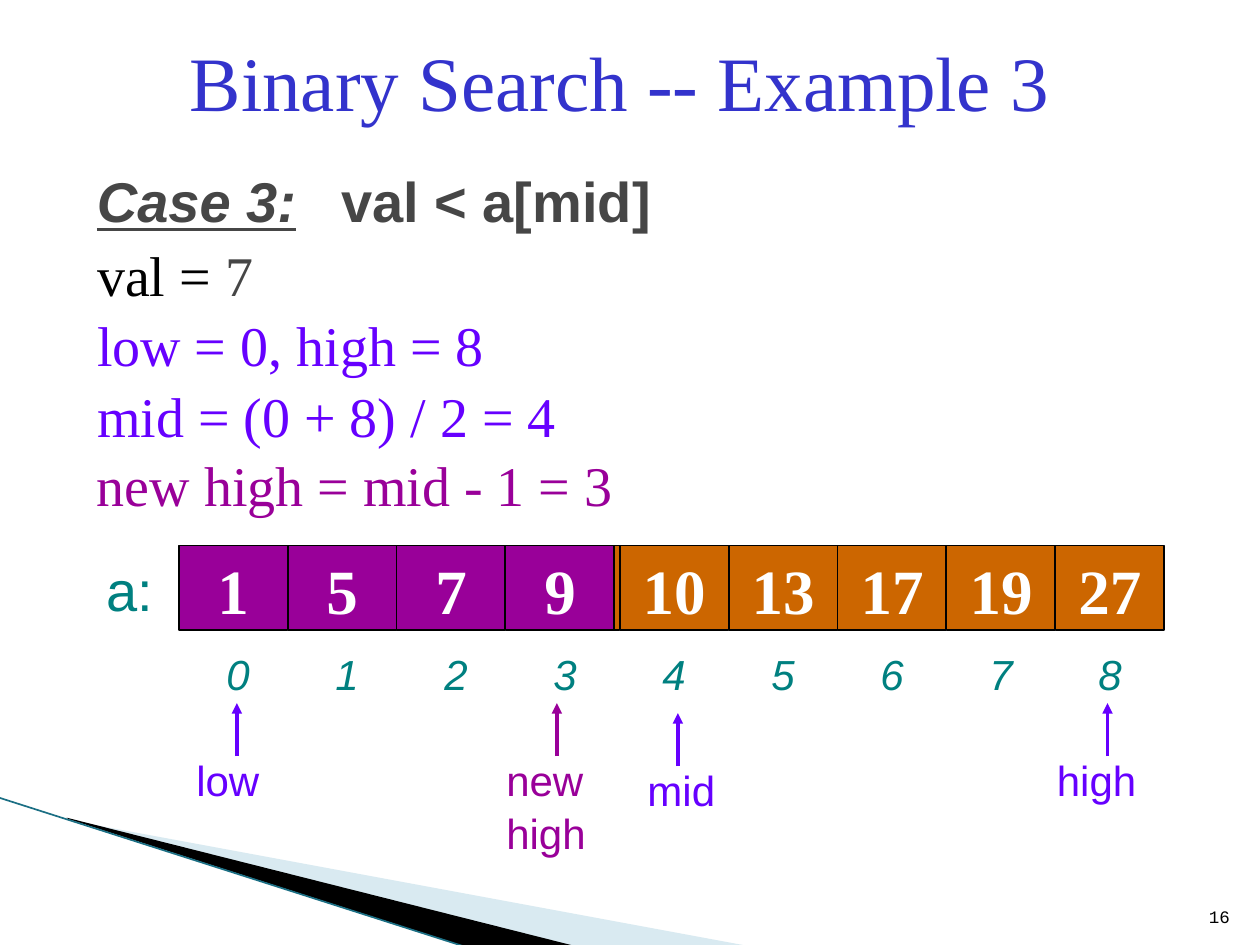
"""Build the slide for the third binary search example."""
from lxml.etree import SubElement
from pptx import Presentation
from pptx.dml.color import RGBColor
from pptx.enum.shapes import MSO_CONNECTOR as CONNECTOR, MSO_SHAPE as SHAPE
from pptx.enum.text import MSO_ANCHOR as ANCHOR, MSO_AUTO_SIZE as AUTO_SIZE, PP_ALIGN as ALIGN
from pptx.oxml.ns import qn
from pptx.util import Inches, Pt

SANS, SERIF, MONO = "Arial", "Times New Roman", "Courier New"
HEX = {
    "title": "3333CC", "text": "464646", "black": "000000", "white": "FFFFFF",
    "bounds": "6600FF", "new": "990099", "cell": "CC6600", "index": "008080",
    "swoosh": "A0CBDC", "edge": "1B6F84",
}
COLORS = {name: RGBColor.from_string(value) for name, value in HEX.items()}


def write(shape, lines, size, font, color, align=ALIGN.LEFT, anchor=ANCHOR.TOP, wrap=True):
    frame = shape.text_frame
    frame.text = lines
    frame.auto_size = AUTO_SIZE.NONE
    frame.word_wrap = wrap
    frame.vertical_anchor = anchor
    for paragraph in frame.paragraphs:
        paragraph.alignment = align
        paragraph.line_spacing = 1.05
        paragraph.space_before = Pt(0)
        paragraph.font.size = Pt(size)
        paragraph.font.name = font
        paragraph.font.color.rgb = COLORS[color]
    return frame.paragraphs


def add_line(start, end, color, width, arrow=False):
    line = slide.shapes.add_connector(CONNECTOR.STRAIGHT, *map(Inches, start + end))
    line.line.color.rgb = COLORS[color]
    line.line.width = Pt(width)
    if arrow:
        SubElement(line.line._get_or_add_ln(), qn("a:tailEnd"), type="triangle")
    SubElement(line._element.spPr, qn("a:effectLst"))


presentation = Presentation()
presentation.slide_width, presentation.slide_height = Inches(10), Inches(7.5)
slide = presentation.slides.add_slide(presentation.slide_layouts[1])
title, body = slide.placeholders

swooshes = [
    ("swoosh", [(0.55, 6.51), (5.95, 7.51), (4.56, 7.51), (0.55, 6.5)]),
    ("black", [(0.53, 6.49), (4.57, 7.51), (3.72, 7.52), (0.54, 6.5)]),
]
for color, points in swooshes:
    corners = [(Inches(x), Inches(y)) for x, y in points]
    builder = slide.shapes.build_freeform(*corners[0])
    builder.add_line_segments(corners[1:], close=True)
    swoosh = builder.convert_to_shape()
    swoosh.shadow.inherit = False
    swoosh.fill.solid()
    swoosh.fill.fore_color.rgb = COLORS[color]
    swoosh.line.fill.background()
    if color == "swoosh":
        fill_color = swoosh._element.spPr.find(qn("a:solidFill"))[0]
        SubElement(fill_color, qn("a:alpha"), val="40000")
add_line((-0.01, 6.33), (3.71, 7.52), "edge", 0.95)

title.left, title.top, title.width, title.height = map(Inches, (0.67, 0.25, 8.5, 0.75))
write(title, "Binary Search -- Example 3", 44, SERIF, "title", ALIGN.CENTER, ANCHOR.MIDDLE)

body.left, body.top, body.width, body.height = map(Inches, (0.67, 1.83, 4.5, 1.7))
body.text_frame.text = ""
steps = write(body, "val = \nlow = 0, high = 8\nmid = (0 + 8) / 2 = 4", 32, SERIF, "bounds")
for paragraph in steps:
    properties = paragraph._p.get_or_add_pPr()
    properties.set("marL", "0")
    properties.set("indent", "0")
    bullet = properties.makeelement(qn("a:buNone"))
    properties.find(qn("a:defRPr")).addprevious(bullet)
steps[0].font.color.rgb = COLORS["black"]
value_run = steps[0].add_run()
value_run.text = "7"
value_run.font.color.rgb = COLORS["text"]

case_box = slide.shapes.add_textbox(*map(Inches, (0.67, 1.25, 4.75, 0.63)))
case = write(case_box, "", 32, SANS, "text")[0]
tabs = case._p.pPr.makeelement(qn("a:tabLst"))
SubElement(tabs, qn("a:tab"), pos=str(Inches(1.94)), algn="l")
case._p.pPr.find(qn("a:defRPr")).addprevious(tabs)
case.font.bold = True
label_run, condition_run = case.add_run(), case.add_run()
label_run.text, condition_run.text = "Case 3:", "\tval < a[mid]"
label_run.font.italic = label_run.font.underline = True

labels = [
    ("new high = mid - 1 = 3", 0.67, 3.5, 4.42, 0.63, 32, SERIF, "new"),
    ("a:", 0.75, 4.33, 0.67, 0.63, 32, SANS, "index"),
    ("low", 1.46, 5.92, 1, 0.5, 24, SANS, "bounds"),
    ("new high", 3.92, 5.92, 1.17, 0.9, 24, SANS, "new"),
    ("mid", 5.04, 6, 0.75, 0.5, 24, SANS, "bounds"),
    ("high", 8.29, 5.92, 1.17, 0.5, 24, SANS, "bounds"),
]
for text, left, top, width, height, size, font, color in labels:
    box = slide.shapes.add_textbox(*map(Inches, (left, top, width, height)))
    write(box, text, size, font, color)

number_box = slide.shapes.add_textbox(*map(Inches, (9.46, 7.01, 0.4, 0.4)))
write(number_box, "16", 10, MONO, "black", ALIGN.RIGHT, ANCHOR.BOTTOM)

values = [1, 5, 7, 9, 10, 13, 17, 19, 27]
array_left, pitch, cell_width, cell_height = 1.46, 0.865, 0.86, 0.67
cells = [(index, array_left, "cell") for index in range(3, len(values))]
cells += [(index, array_left - 0.04, "new") for index in range(4)]
for index, left, color in cells:
    cell = slide.shapes.add_shape(
        SHAPE.RECTANGLE, Inches(left + index * pitch), Inches(4.33),
        Inches(cell_width), Inches(cell_height))
    cell.shadow.inherit = False
    cell.fill.solid()
    cell.fill.fore_color.rgb = COLORS[color]
    cell.line.color.rgb = COLORS["black"]
    cell.line.width = Pt(0.75)
    paragraphs = write(cell, str(values[index]), 36, SERIF, "white",
                       ALIGN.CENTER, ANCHOR.MIDDLE, False)
    paragraphs[0].font.bold = True

for index in range(len(values)):
    index_box = slide.shapes.add_textbox(
        Inches(array_left + index * pitch), Inches(5), Inches(cell_width), Inches(cell_height))
    paragraphs = write(index_box, str(index), 24, SANS, "index",
                       ALIGN.CENTER, ANCHOR.MIDDLE, False)
    paragraphs[0].font.italic = True

for x, bottom, color in [(1.88, 6, "bounds"), (4.42, 6, "new"),
                         (5.38, 6.08, "bounds"), (8.79, 6, "bounds")]:
    add_line((x, bottom), (x, bottom - 0.42), color, 2, arrow=True)

presentation.save("out.pptx")
